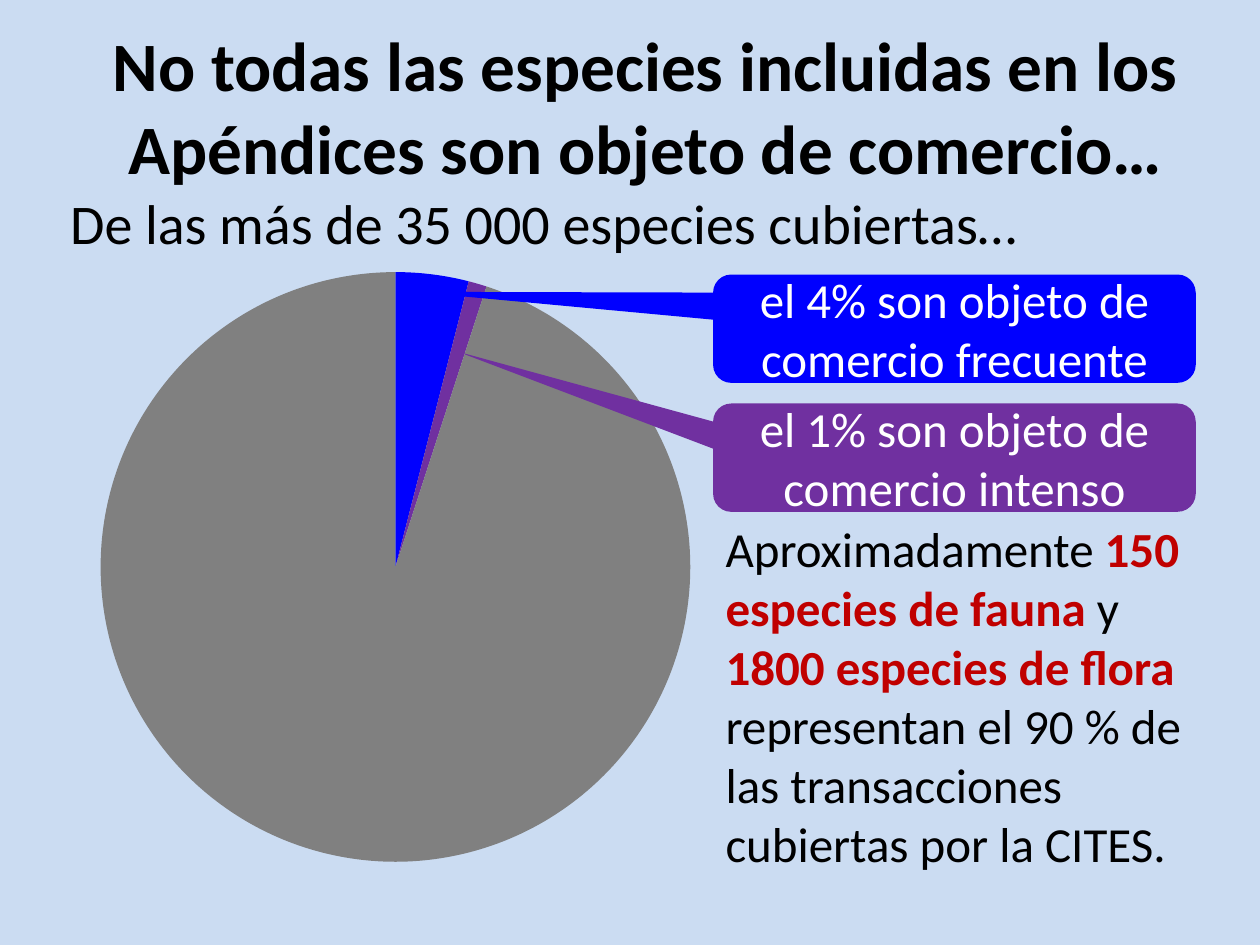
from lxml import etree
from pptx import Presentation
from pptx.chart.data import CategoryChartData
from pptx.dml.color import RGBColor
from pptx.enum.chart import XL_CHART_TYPE
from pptx.enum.shapes import MSO_SHAPE
from pptx.enum.text import MSO_ANCHOR, PP_ALIGN
from pptx.oxml.ns import qn
from pptx.util import Pt

PIE = XL_CHART_TYPE.PIE
RECTANGLE = MSO_SHAPE.RECTANGLE
CALLOUT = MSO_SHAPE.ROUNDED_RECTANGULAR_CALLOUT
TOP, MIDDLE = MSO_ANCHOR.TOP, MSO_ANCHOR.MIDDLE
LEFT, CENTER = PP_ALIGN.LEFT, PP_ALIGN.CENTER

BLACK = RGBColor(0x00, 0x00, 0x00)
WHITE = RGBColor(0xFF, 0xFF, 0xFF)
BLUE = RGBColor(0x00, 0x00, 0xFF)
PURPLE = RGBColor(0x70, 0x30, 0xA0)
GREY = RGBColor(0x80, 0x80, 0x80)
RED = RGBColor(0xC0, 0x00, 0x00)
TINT = RGBColor(0x55, 0x8E, 0xD5)
FONT = "Calibri"

SLIDE_WIDTH, SLIDE_HEIGHT = 720, 540
TITLE = "No todas las especies incluidas en los Apéndices son objeto de comercio…"
SUBTITLE = "De las más de 35 000 especies cubiertas…"
SLICES = [("1", 4, BLUE), ("2", 1, PURPLE), ("3", 95, GREY)]
# text, fill, tail tip as a share of the callout's size from its centre
CALLOUTS = [
    ("el 4% son objeto de comercio frecuente", BLUE, (-1.12, -0.34)),
    ("el 1% son objeto de comercio intenso", PURPLE, (-1.03, -0.98)),
]
# text, emphasised
SUMMARY = [
    ("Aproximadamente ", False),
    ("150 especies de fauna ", True),
    ("y ", False),
    ("1800 especies de flora", True),
    (" representan el 90 % de las transacciones cubiertas por la CITES.", False),
]

CHART_BOX = (5, 145.5, 442, 357)
PIE_DIAMETER = 337
CALLOUT_LEFT, CALLOUT_TOP = 407.5, 156.9
CALLOUT_WIDTH, CALLOUT_HEIGHT, CALLOUT_STEP = 275.8, 61.9, 73.7


def points(box):
    return [Pt(value) for value in box]


def write_text(shape, runs, size, color=BLACK, bold=False, align=LEFT, anchor=TOP):
    """Fill a shape with one paragraph; emphasised runs turn bold red."""
    frame = shape.text_frame
    frame.word_wrap = True
    frame.vertical_anchor = anchor
    paragraph = frame.paragraphs[0]
    paragraph.alignment = align
    for text, emphasised in runs:
        run = paragraph.add_run()
        run.text = text
        run.font.name = FONT
        run.font.size = Pt(size)
        run.font.bold = bold or emphasised
        run.font.color.rgb = RED if emphasised else color


def add_filled_shape(slide, preset, box, color):
    shape = slide.shapes.add_shape(preset, *points(box))
    shape.shadow.inherit = False
    shape.fill.solid()
    shape.fill.fore_color.rgb = color
    shape.line.fill.background()
    return shape


def add_background(slide):
    panel = add_filled_shape(slide, RECTANGLE, (0, 0, SLIDE_WIDTH, SLIDE_HEIGHT), TINT)
    color = panel._element.spPr.find(qn("a:solidFill")).find(qn("a:srgbClr"))
    etree.SubElement(color, qn("a:alpha"), val="30000")


def center_plot(chart, width, height):
    """Fix the inner plot area, as shares of the chart, around its centre."""
    plot_area = chart._chartSpace.chart.plotArea
    for old_layout in plot_area.findall(qn("c:layout")):
        plot_area.remove(old_layout)
    layout = etree.Element(qn("c:layout"))
    manual = etree.SubElement(layout, qn("c:manualLayout"))
    settings = [
        ("layoutTarget", "inner"), ("xMode", "edge"), ("yMode", "edge"),
        ("x", (1 - width) / 2), ("y", (1 - height) / 2), ("w", width), ("h", height),
    ]
    for name, value in settings:
        etree.SubElement(manual, qn(f"c:{name}"), val=str(value))
    plot_area.insert(0, layout)


def add_pie(slide):
    data = CategoryChartData()
    data.categories = [name for name, _, _ in SLICES]
    data.add_series("Series 1", [value for _, value, _ in SLICES])
    chart = slide.shapes.add_chart(PIE, *points(CHART_BOX), data).chart
    chart.has_legend = False
    chart.has_title = False
    chart.font.name = FONT
    chart.font.size = Pt(10)
    chart.font.color.rgb = BLACK
    plot = chart.plots[0]
    plot.vary_by_categories = True
    for index, (_, _, color) in enumerate(SLICES):
        slice_format = plot.series[0].points[index].format
        slice_format.fill.solid()
        slice_format.fill.fore_color.rgb = color
        slice_format.line.fill.background()
    center_plot(chart, PIE_DIAMETER / CHART_BOX[2], PIE_DIAMETER / CHART_BOX[3])


def add_callouts(slide):
    for index, (text, color, tip) in enumerate(CALLOUTS):
        top = CALLOUT_TOP + index * CALLOUT_STEP
        box = (CALLOUT_LEFT, top, CALLOUT_WIDTH, CALLOUT_HEIGHT)
        callout = add_filled_shape(slide, CALLOUT, box, color)
        callout.adjustments[0], callout.adjustments[1] = tip
        write_text(callout, [(text, False)], 28, color=WHITE, align=CENTER, anchor=MIDDLE)


def main():
    presentation = Presentation()
    presentation.slide_width = Pt(SLIDE_WIDTH)
    presentation.slide_height = Pt(SLIDE_HEIGHT)
    slide = presentation.slides.add_slide(presentation.slide_layouts[6])

    add_background(slide)
    title = slide.shapes.add_textbox(*points((45, 15, 648, 90)))
    write_text(title, [(TITLE, False)], 39.6, bold=True, align=CENTER, anchor=MIDDLE)
    subtitle = slide.shapes.add_textbox(*points((33, 104, 653, 65)))
    write_text(subtitle, [(SUBTITLE, False)], 32)
    add_pie(slide)
    add_callouts(slide)
    summary = slide.shapes.add_textbox(*points((CALLOUT_LEFT, 293, 292, 211)))
    write_text(summary, SUMMARY, 28)

    presentation.save("out.pptx")


if __name__ == "__main__":
    main()
